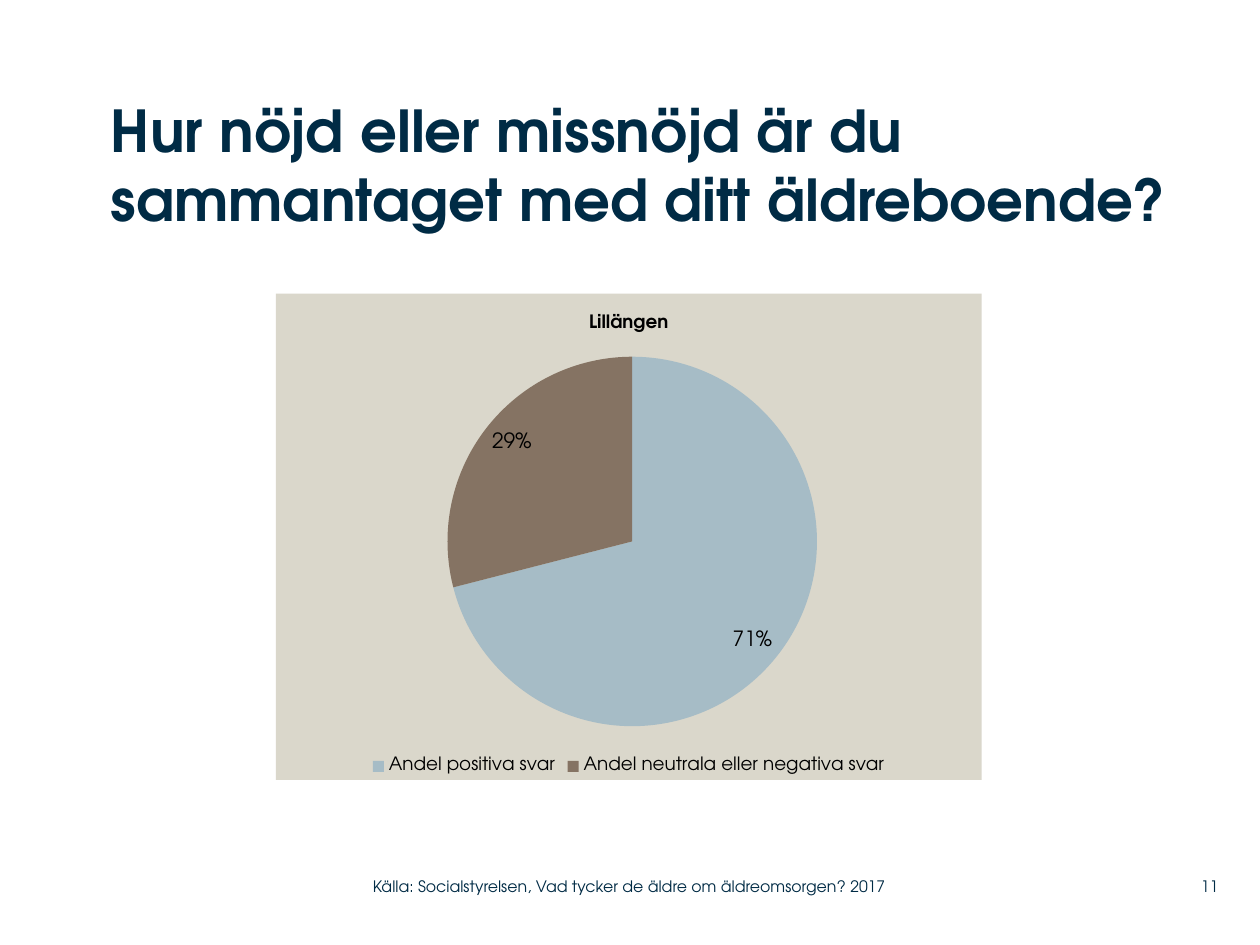
from dataclasses import dataclass

from lxml import etree
from pptx import Presentation
from pptx.chart.data import CategoryChartData
from pptx.dml.color import RGBColor
from pptx.enum.chart import XL_CHART_TYPE, XL_LABEL_POSITION, XL_LEGEND_POSITION
from pptx.enum.text import MSO_ANCHOR, MSO_AUTO_SIZE, PP_ALIGN
from pptx.oxml import parse_xml
from pptx.oxml.ns import nsdecls, qn
from pptx.util import Inches, Pt

PIE = XL_CHART_TYPE.PIE
INSIDE_END = XL_LABEL_POSITION.INSIDE_END
LEGEND_BOTTOM = XL_LEGEND_POSITION.BOTTOM
TOP, MIDDLE = MSO_ANCHOR.TOP, MSO_ANCHOR.MIDDLE
LEFT, RIGHT = PP_ALIGN.LEFT, PP_ALIGN.RIGHT
NO_AUTOFIT = MSO_AUTO_SIZE.NONE

FONT = "TeX Gyre Adventor"
NAVY = RGBColor(0x00, 0x2B, 0x45)
BLACK = RGBColor(0x00, 0x00, 0x00)
SAND = RGBColor(0xDA, 0xD7, 0xCB)
BLUE = RGBColor(0xA6, 0xBC, 0xC6)
BROWN = RGBColor(0x85, 0x73, 0x63)


@dataclass
class Box:
    left: float
    top: float
    width: float
    height: float

    def lengths(self):
        return [Inches(value) for value in (self.left, self.top, self.width, self.height)]


@dataclass
class Answer:
    label: str
    percent: int
    color: RGBColor


ANSWERS = [
    Answer("Andel positiva svar", 71, BLUE),
    Answer("Andel neutrala eller negativa svar", 29, BROWN),
]
PIE_LAYOUT = {"x": 0.24, "y": 0.13, "w": 0.53, "h": 0.76}


def format_font(font, size: float, color: RGBColor, bold: bool = False) -> None:
    font.name = FONT
    font.size = Pt(size)
    font.bold = bold
    font.color.rgb = color


def write_text(shape, text: str, *, size: float, bold: bool = False,
               align=LEFT, anchor=MIDDLE) -> None:
    frame = shape.text_frame
    frame.word_wrap = True
    frame.auto_size = NO_AUTOFIT
    frame.vertical_anchor = anchor
    frame.margin_left = frame.margin_top = frame.margin_right = frame.margin_bottom = 0
    paragraph = frame.paragraphs[0]
    paragraph.alignment = align
    run = paragraph.add_run()
    run.text = text
    format_font(run.font, size, NAVY, bold)


def add_label(slide, box: Box, text: str, align=LEFT) -> None:
    write_text(slide.shapes.add_textbox(*box.lengths()), text, size=9, align=align)


def set_chart_area(chart) -> None:
    """Fill the chart background and fix the place of the pie."""
    chart_element = chart.element.find(qn("c:chart"))
    chart_element.addnext(parse_xml(
        f'<c:spPr {nsdecls("c", "a")}><a:solidFill><a:srgbClr val="{SAND}"/></a:solidFill>'
        '<a:ln><a:noFill/></a:ln></c:spPr>'))
    plot_area = chart_element.find(qn("c:plotArea"))
    for old_layout in plot_area.findall(qn("c:layout")):
        plot_area.remove(old_layout)
    layout = etree.Element(qn("c:layout"))
    manual = etree.SubElement(layout, qn("c:manualLayout"))
    settings = {"layoutTarget": "inner", "xMode": "edge", "yMode": "edge", **PIE_LAYOUT}
    for name, value in settings.items():
        etree.SubElement(manual, qn(f"c:{name}")).set("val", str(value))
    plot_area.insert(0, layout)


def add_pie(slide, box: Box, title: str, answers: list[Answer]) -> None:
    data = CategoryChartData(number_format="0")
    data.categories = [answer.label for answer in answers]
    data.add_series("Series 1", [answer.percent for answer in answers])
    chart = slide.shapes.add_chart(PIE, *box.lengths(), data).chart
    format_font(chart.font, 18, BLACK)
    set_chart_area(chart)

    # Title and legend
    chart.has_title = True
    title_paragraph = chart.chart_title.text_frame.paragraphs[0]
    title_run = title_paragraph.add_run()
    title_run.text = title
    format_font(title_run.font, 10.5, BLACK, bold=True)
    chart.has_legend = True
    chart.legend.position = LEGEND_BOTTOM
    chart.legend.include_in_layout = False
    format_font(chart.legend.font, 10.5, BLACK)

    # Slices and percentages
    plot = chart.plots[0]
    plot.vary_by_categories = True
    for index, answer in enumerate(answers):
        fill = plot.series[0].points[index].format.fill
        fill.solid()
        fill.fore_color.rgb = answer.color
    labels = plot.series[0].data_labels
    labels.show_value = False
    labels.show_percentage = True
    labels.number_format = "0%"
    labels.number_format_is_linked = False
    labels.position = INSIDE_END
    format_font(labels.font, 12, BLACK)


def main() -> None:
    presentation = Presentation()
    presentation.slide_width = Inches(10)
    presentation.slide_height = Inches(7.5)
    slide = presentation.slides.add_slide(presentation.slide_layouts[5])

    # Heading
    title = slide.shapes.title
    title.left, title.top, title.width, title.height = Box(0.88, 0.75, 8.83, 1.42).lengths()
    write_text(title, "Hur nöjd eller missnöjd är du sammantaget med ditt äldreboende?",
               size=33, bold=True, anchor=TOP)

    # Share of answers
    add_pie(slide, Box(2.19, 2.33, 5.6, 3.86), "Lillängen", ANSWERS)

    # Footer
    add_label(slide, Box(2.96, 6.89, 4.43, 0.29),
              "Källa: Socialstyrelsen, Vad tycker de äldre om äldreomsorgen? 2017")
    add_label(slide, Box(9.2, 6.89, 0.47, 0.29), "11", align=RIGHT)

    presentation.save("out.pptx")


if __name__ == "__main__":
    main()
